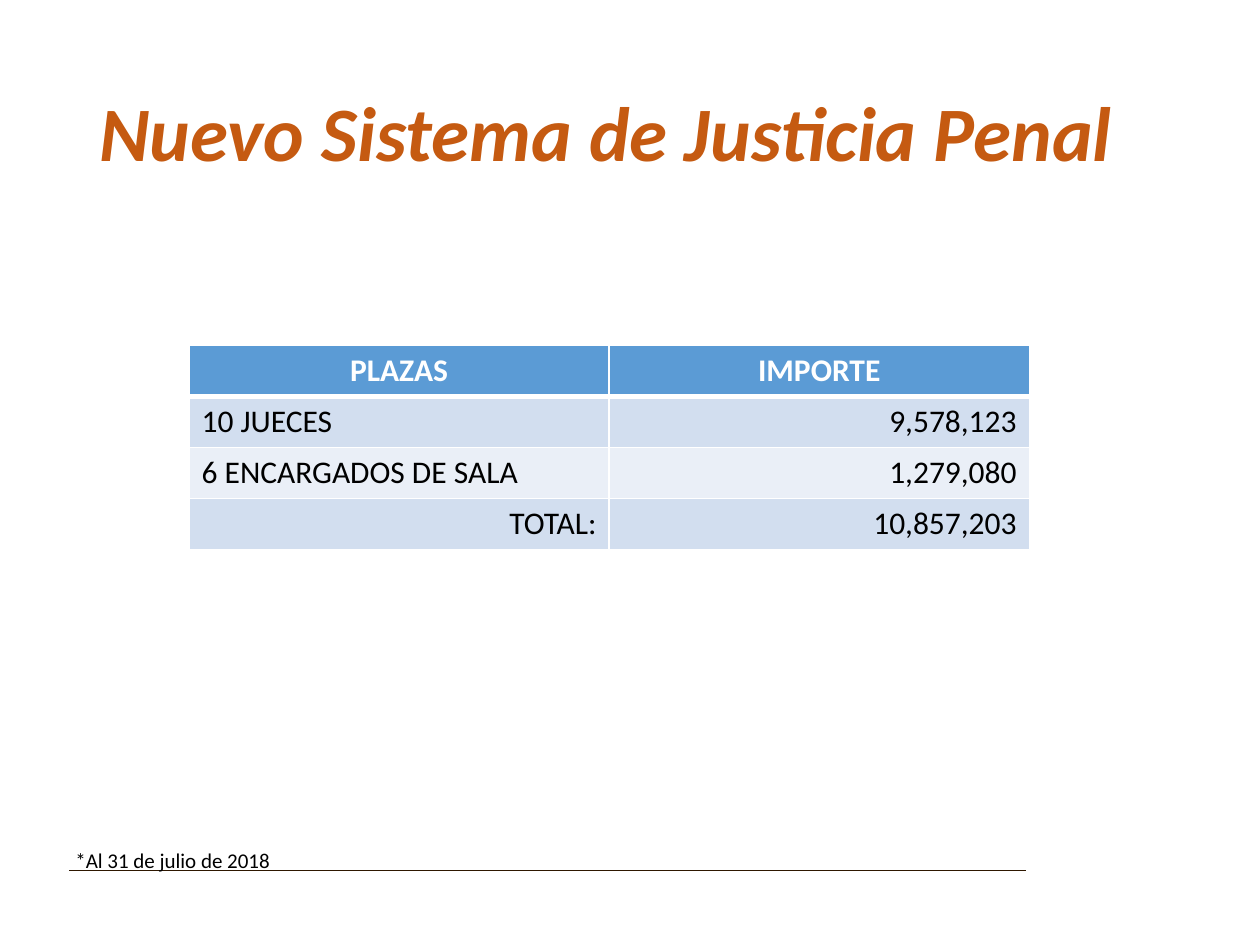
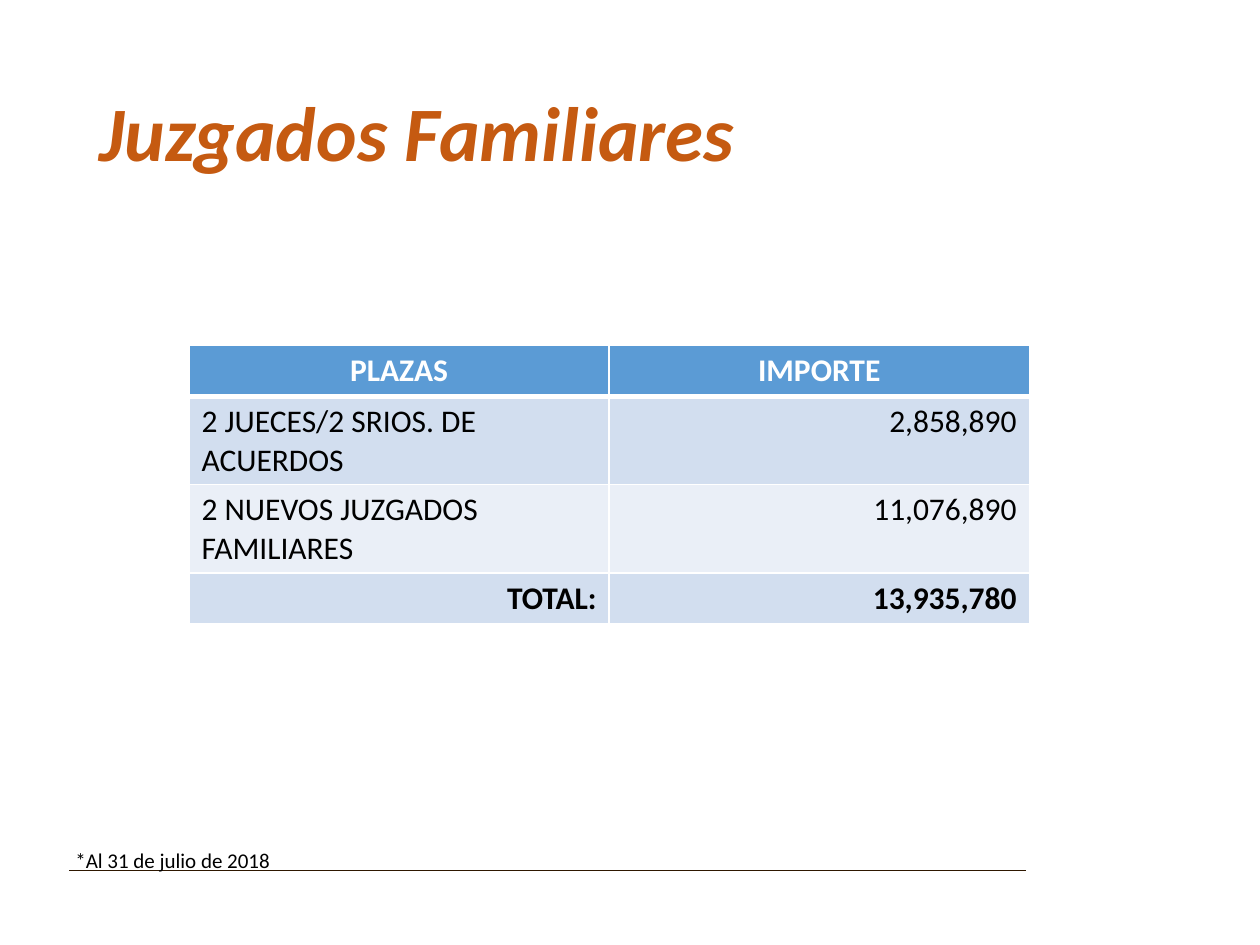
from lxml.etree import SubElement
from pptx import Presentation
from pptx.dml.color import RGBColor
from pptx.enum.shapes import MSO_CONNECTOR
from pptx.enum.text import MSO_ANCHOR, MSO_AUTO_SIZE, PP_ALIGN as Align
from pptx.oxml.ns import qn
from pptx.util import Cm, Pt

FONT = "Calibri"
ORANGE = RGBColor(0xC5, 0x5A, 0x11)
BROWN = RGBColor(0x2E, 0x17, 0x00)
BLACK = RGBColor(0x00, 0x00, 0x00)
WHITE = RGBColor(0xFF, 0xFF, 0xFF)
BLUE = RGBColor(0x5B, 0x9B, 0xD5)
BANDS = RGBColor(0xD2, 0xDE, 0xEF), RGBColor(0xEA, 0xEF, 0xF7)

TITLE_BOX = 1.75, 1.8, 21.89, 1.63
TABLE_BOX = 3.81, 6.96, 16.94, 4.12
FOOTER_BOX = 1.27, 16.97, 6.48, 0.76
RULE_START, RULE_END, RULE_Y = 1.4, 20.68, 17.55

TITLE_STYLE = {"size": Pt(44), "bold": True, "italic": True}
FOOTER_STYLE = {"size": Pt(12)}
HEADER_STYLE = {"size": Pt(18), "bold": True}
BODY_STYLE = {"size": Pt(18), "bold": False}

HEADINGS = "PLAZAS", "IMPORTE"
CUTOFF_NOTE = "*Al 31 de julio de 2018"
BUDGETS = [
    {
        "title": "Nuevo Sistema de Justicia Penal",
        "posts": [("10 JUECES", "9,578,123"),
                  ("6 ENCARGADOS DE SALA", "1,279,080")],
        "total": "10,857,203",
        "bold_total": False,
    },
    {
        "title": "Juzgados Familiares",
        "posts": [("2 JUECES/2 SRIOS. DE ACUERDOS", "2,858,890"),
                  ("2 NUEVOS JUZGADOS FAMILIARES", "11,076,890")],
        "total": "13,935,780",
        "bold_total": True,
    },
]


def write(frame, text, style, color, align=Align.LEFT):
    """Put one styled paragraph in a text frame."""
    paragraph = frame.paragraphs[0]
    paragraph.alignment = align
    run = paragraph.add_run()
    run.text = text
    run.font.name = FONT
    run.font.color.rgb = color
    for name, value in style.items():
        setattr(run.font, name, value)
    return paragraph


def add_label(slide, box, text, style, color):
    """Add a wrapped text box and return its frame."""
    frame = slide.shapes.add_textbox(*map(Cm, box)).text_frame
    frame.word_wrap = True
    frame.vertical_anchor = MSO_ANCHOR.TOP
    write(frame, text, style, color)
    return frame


def add_title(slide, box, text):
    """Add the slide heading."""
    frame = add_label(slide, box, text, TITLE_STYLE, ORANGE)
    frame.paragraphs[0].line_spacing = 0.9


def add_footer(slide, box):
    """Add the thin rule and the cut-off note."""
    rule = slide.shapes.add_connector(
        MSO_CONNECTOR.STRAIGHT,
        Cm(RULE_END), Cm(RULE_Y), Cm(RULE_START), Cm(RULE_Y))
    rule.line.color.rgb = BROWN
    rule.line.width = Pt(0.5)
    SubElement(rule._element.spPr, qn("a:effectLst"))
    note = add_label(slide, box, CUTOFF_NOTE, FOOTER_STYLE, BLACK)
    note.auto_size = MSO_AUTO_SIZE.SHAPE_TO_FIT_TEXT


def set_borders(cell, top, bottom):
    """Draw white borders, with the top and bottom widths in points."""
    properties = cell._tc.get_or_add_tcPr()
    widths = {"lnL": 1, "lnR": 1, "lnT": top, "lnB": bottom}
    for side, width in widths.items():
        border = SubElement(properties, qn(f"a:{side}"), w=str(Pt(width)))
        fill = SubElement(border, qn("a:solidFill"))
        SubElement(fill, qn("a:srgbClr"), val=str(WHITE))


def add_budget_table(slide, box, posts, total, bold_total):
    """Add the table of posts and amounts with its total row."""
    rows = [HEADINGS, *posts, ("TOTAL:", total)]
    last = len(rows) - 1
    table = slide.shapes.add_table(
        len(rows), len(HEADINGS), *map(Cm, box)).table
    for r, row in enumerate(rows):
        for c, text in enumerate(row):
            cell = table.cell(r, c)
            set_borders(cell, 3 if r == 1 else 1, 3 if r == 0 else 1)
            cell.fill.solid()
            if r == 0:
                cell.fill.fore_color.rgb = BLUE
                write(cell.text_frame, text, HEADER_STYLE, WHITE, Align.CENTER)
                continue
            cell.fill.fore_color.rgb = BANDS[(r - 1) % 2]
            style = BODY_STYLE | {"bold": bold_total and r == last}
            align = Align.RIGHT if c == 1 or r == last else Align.LEFT
            write(cell.text_frame, text, style, BLACK, align)


def add_budget_slide(deck, title, **budget):
    """Add one slide with heading, budget table and footer."""
    slide = deck.slides.add_slide(deck.slide_layouts[6])
    add_title(slide, TITLE_BOX, title)
    add_budget_table(slide, TABLE_BOX, **budget)
    add_footer(slide, FOOTER_BOX)


def main():
    """Build and save the deck."""
    deck = Presentation()
    deck.slide_width, deck.slide_height = Cm(25.4), Cm(19.05)
    for budget in BUDGETS:
        add_budget_slide(deck, **budget)
    deck.save("out.pptx")


if __name__ == "__main__":
    main()
